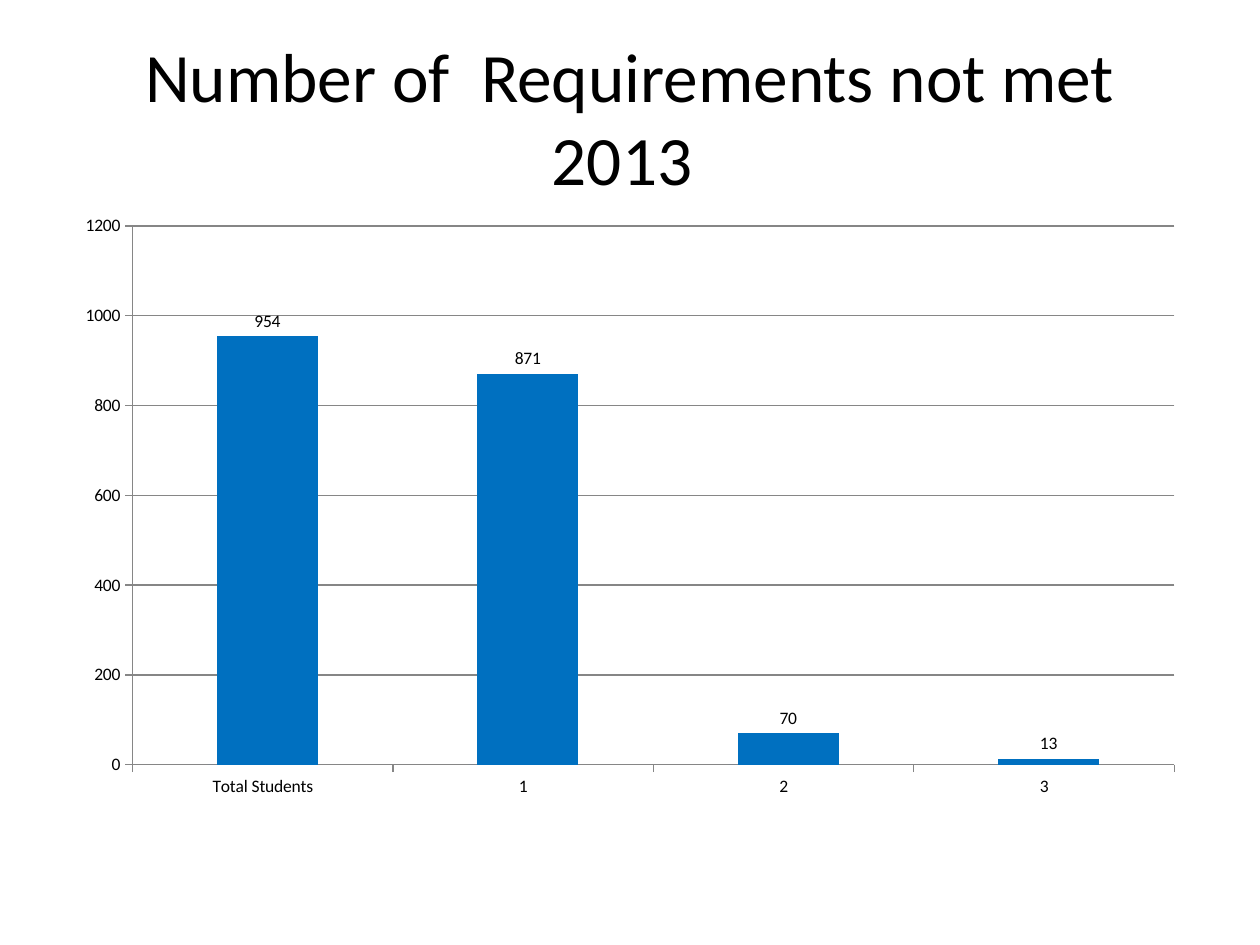
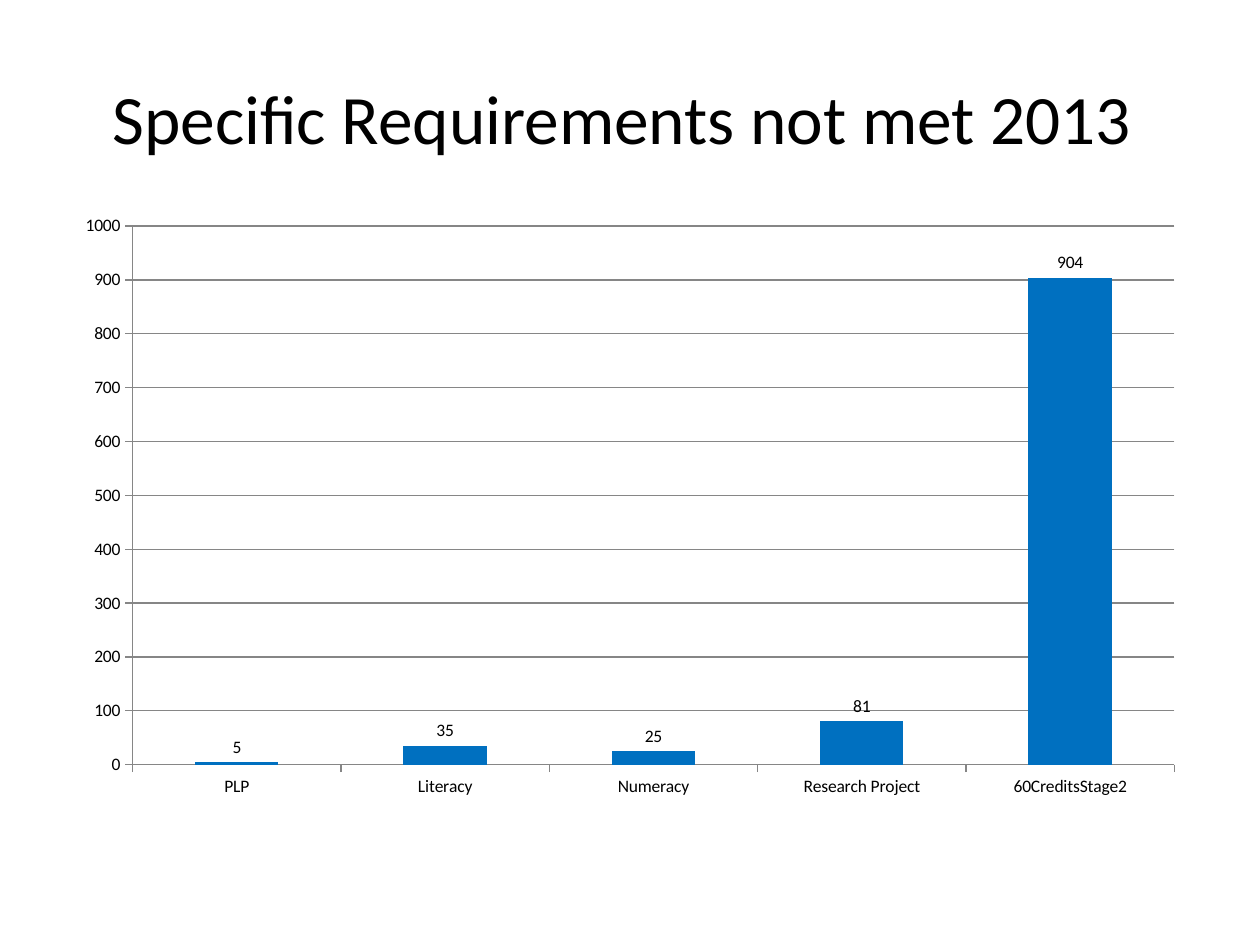
from pptx import Presentation
from pptx.chart.data import CategoryChartData as ChartData
from pptx.dml.color import RGBColor
from pptx.enum.chart import XL_CHART_TYPE as Kind, XL_LABEL_POSITION as Pos
from pptx.enum.chart import XL_TICK_MARK as Tick
from pptx.enum.text import MSO_ANCHOR as Anchor, PP_ALIGN as Align
from pptx.util import Inches, Pt

BLACK = RGBColor(0x00, 0x00, 0x00)
GREY = RGBColor(0x86, 0x86, 0x86)
PALE = RGBColor(0x4F, 0x81, 0xBD)
BLUE = RGBColor(0x00, 0x70, 0xC0)

WIDE, HIGH = Inches(10), Inches(7.5)
# Boxes as shares of the slide: left, top, width, height
HEAD = (0.05, 0.04, 0.9, 1 / 6)
BODY = (0.05, 0.216, 0.9, 0.64)

TITLE = {"name": "Calibri", "size": Pt(39.6)}
SMALL = {"name": "Calibri", "size": Pt(10)}

SLIDES = [
    {
        "title": "Number of  Requirements not met 2013 ",
        "cats": ["Total Students", "1", "2", "3"],
        "series": [
            ("Series 1", [0, 0, 0, 0], PALE, False),
            ("Series 2", [954, 871, 70, 13], BLUE, True),
        ],
        "plot": {"gap_width": 149, "overlap": 91},
        "scale": {"maximum_scale": 1200, "major_unit": 200},
    },
    {
        "title": "Specific Requirements not met 2013 ",
        "cats": ["PLP", "Literacy", "Numeracy", "Research Project",
                 "60CreditsStage2"],
        "series": [("Series 1", [5, 35, 25, 81, 904], BLUE, True)],
        "plot": {"gap_width": 150, "overlap": 0},
        "scale": {"maximum_scale": 1000, "major_unit": 100},
    },
]


def assign(item, values):
    for key, value in values.items():
        setattr(item, key, value)


def style(font, look):
    assign(font, look)
    font.color.rgb = BLACK


def place(box):
    left, top, wide, high = box
    return (round(left * WIDE), round(top * HIGH),
            round(wide * WIDE), round(high * HIGH))


def rule(line):
    line.color.rgb = GREY
    line.width = Pt(0.75)


def add_title(slide, box, text):
    frame = slide.shapes.add_textbox(*place(box)).text_frame
    assign(frame, {"word_wrap": True, "vertical_anchor": Anchor.MIDDLE})
    para = frame.paragraphs[0]
    para.alignment = Align.CENTER
    run = para.add_run()
    run.text = text
    style(run.font, TITLE)


def add_bars(slide, box, info):
    data = ChartData()
    data.categories = info["cats"]
    for name, vals, _, _ in info["series"]:
        data.add_series(name, vals)
    chart = slide.shapes.add_chart(
        Kind.COLUMN_CLUSTERED, *place(box), data).chart
    assign(chart, {"has_legend": False, "has_title": False})
    style(chart.font, SMALL)

    # Axes and grid
    for axis in (chart.category_axis, chart.value_axis):
        axis.major_tick_mark = Tick.OUTSIDE
        rule(axis.format.line)
    scale = chart.value_axis
    assign(scale, {"minimum_scale": 0, "has_major_gridlines": True,
                   **info["scale"]})
    rule(scale.major_gridlines.format.line)

    # Bars and their values
    plot = chart.plots[0]
    assign(plot, {"vary_by_categories": False, **info["plot"]})
    for bars, (_, _, color, shown) in zip(plot.series, info["series"]):
        bars.invert_if_negative = False
        bars.format.fill.solid()
        bars.format.fill.fore_color.rgb = color
        if shown:
            labels = bars.data_labels
            assign(labels, {"show_value": True, "position": Pos.OUTSIDE_END})
            style(labels.font, SMALL)


def main():
    deck = Presentation()
    assign(deck, {"slide_width": WIDE, "slide_height": HIGH})
    for info in SLIDES:
        slide = deck.slides.add_slide(deck.slide_layouts[6])
        add_title(slide, HEAD, info["title"])
        add_bars(slide, BODY, info)
    deck.save("out.pptx")


if __name__ == "__main__":
    main()
